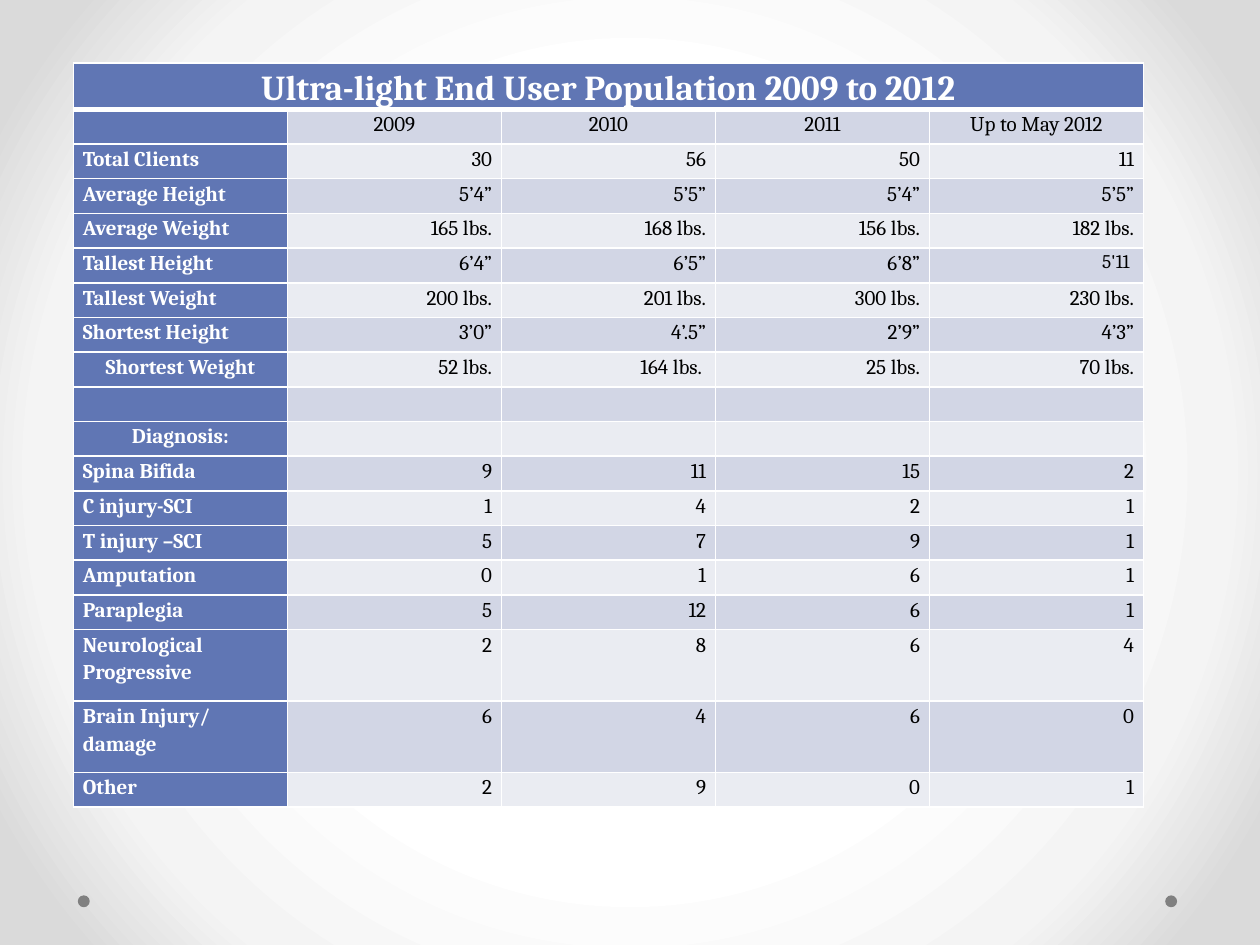
import dataclasses
import pptx
import pptx.dml.color
import pptx.enum.shapes
import pptx.enum.text
import pptx.oxml
import pptx.oxml.ns
import pptx.util

Cm, Pt = pptx.util.Cm, pptx.util.Pt
Rgb = pptx.dml.color.RGBColor.from_string
Align = pptx.enum.text.PP_ALIGN
qn = pptx.oxml.ns.qn


@dataclasses.dataclass(frozen=True)
class Theme:
    font: str = "Cambria"
    head: int = 20
    body: int = 12
    small: int = 11
    blue: str = "6076B4"
    bands: tuple = ("D2D6E5", "EAECF2")
    white: str = "FFFFFF"
    black: str = "000000"
    dot: str = "808080"
    glow: tuple = ((50, "FFFFFF"), (76, "F4F4F4"), (92, "DADADA"))


THEME = Theme()
TITLE = "Ultra-light End User Population 2009 to 2012"
ROWS = [
    ("", "2009", "2010", "2011", "Up to May 2012"),
    ("Total Clients", "30", "56", "50", "11"),
    ("Average Height", "5’4”", "5’5”", "5’4”", "5’5”"),
    ("Average Weight", "165 lbs.", "168 lbs.", "156 lbs.", "182 lbs."),
    ("Tallest Height", "6’4”", "6’5”", "6’8”", "5'11 "),
    ("Tallest Weight", "200 lbs.", "201 lbs.", "300 lbs.", "230 lbs."),
    ("Shortest Height", "3’0”", "4’.5”", "2’9”", "4’3”"),
    ("Shortest Weight", "52 lbs.", "164 lbs. ", "25 lbs.", "70 lbs."),
    ("", "", "", "", ""),
    ("Diagnosis:", "", "", "", ""),
    ("Spina Bifida", "9", "11", "15", "2"),
    ("C injury-SCI", "1", "4", "2", "1"),
    ("T injury –SCI", "5", "7", "9", "1"),
    ("Amputation", "0", "1", "6", "1"),
    ("Paraplegia", "5", "12", "6", "1"),
    ("Neurological Progressive", "2", "8", "6", "4"),
    ("Brain Injury/ damage", "6", "4", "6", "0"),
    ("Other", "2", "9", "0", "1"),
]
CENTRED = {"Shortest Weight", "Diagnosis:"}
TALL = {"Neurological Progressive", "Brain Injury/ damage"}


def apply(item, values):
    for name, value in values.items():
        setattr(item, name, value)


def paint(item, color):
    item.fill.solid()
    item.fill.fore_color.rgb = Rgb(color)


def backdrop(slide):
    """Radial glow, white in the middle and grey at the corners."""
    slide.background.fill.gradient()
    old = slide.element.find(".//" + qn("a:gradFill"))
    stops = "".join(
        f'<a:gs pos="{pos * 1000}"><a:srgbClr val="{color}"/></a:gs>'
        for pos, color in THEME.glow)
    new = pptx.oxml.parse_xml(
        f'<a:gradFill {pptx.oxml.ns.nsdecls("a")} rotWithShape="1">'
        f'<a:gsLst>{stops}</a:gsLst><a:path path="circle">'
        '<a:fillToRect l="50000" t="50000" r="50000" b="50000"/>'
        '</a:path></a:gradFill>')
    old.getparent().replace(old, new)


def dots(slide, left, top, width, size):
    """One dot at each end of the box."""
    for x in (left, left + width - size):
        dot = slide.shapes.add_shape(
            pptx.enum.shapes.MSO_SHAPE.OVAL, x, top, size, size)
        paint(dot, THEME.dot)
        dot.line.fill.background()
        dot.shadow.inherit = False


def edge(cell, row):
    """White cell borders, with a thick rule below the title."""
    props = cell._tc.get_or_add_tcPr()
    for side in "LRTB":
        thick = (row, side) in ((0, "B"), (1, "T"))
        props.append(pptx.oxml.parse_xml(
            f'<a:ln{side} {pptx.oxml.ns.nsdecls("a")} w="{Pt(3 if thick else 1)}">'
            f'<a:solidFill><a:srgbClr val="{THEME.white}"/></a:solidFill>'
            f'</a:ln{side}>'))


def write(cell, text, size, color, bold, align):
    apply(cell, {"margin_left": Cm(0.19), "margin_right": Cm(0.19),
                 "margin_top": 0, "margin_bottom": 0})
    para = cell.text_frame.paragraphs[0]
    apply(para, {"alignment": align, "line_spacing": 1.15})
    if text:
        run = para.add_run()
        run.text = text
        apply(run.font, {"name": THEME.font, "size": Pt(size), "bold": bold})
        run.font.color.rgb = Rgb(color)
    else:
        # Keeps an empty cell from stretching its row
        para._p.append(pptx.oxml.parse_xml(
            f'<a:endParaRPr {pptx.oxml.ns.nsdecls("a")} sz="{size * 100}"/>'))


def grid(slide, left, top, width):
    """Table with a merged title row, a label column and banded values."""
    count = len(ROWS[0])
    high = [Cm(0.93)] + [Cm(1.44 if row[0] in TALL else 0.7) for row in ROWS]
    table = slide.shapes.add_table(
        len(high), count, left, top, width, sum(high)).table
    apply(table, {"first_row": False, "horz_banding": False})
    for row, value in zip(table.rows, high):
        row.height = value

    # Title row
    for cell in table.rows[0].cells:
        edge(cell, 0)
        paint(cell, THEME.blue)
    table.cell(0, 0).merge(table.cell(0, count - 1))
    write(table.cell(0, 0), TITLE, THEME.head, THEME.white, True, Align.CENTER)

    # Labels and values
    for r, row in enumerate(ROWS, 1):
        for c, text in enumerate(row):
            cell = table.cell(r, c)
            label = c == 0
            size = THEME.small if text == "5'11 " else THEME.body
            if r == 1 or text in CENTRED:
                align = Align.CENTER
            else:
                align = Align.LEFT if label else Align.RIGHT
            edge(cell, r)
            paint(cell, THEME.blue if label else THEME.bands[(r - 1) % 2])
            write(cell, text, size, THEME.white if label else THEME.black,
                  label, align)


def main():
    deck = pptx.Presentation()
    apply(deck, {"slide_width": Cm(25.4), "slide_height": Cm(19.05)})
    slide = deck.slides.add_slide(deck.slide_layouts[6])
    backdrop(slide)
    dots(slide, Cm(1.57), Cm(18.05), Cm(22.16), Cm(0.24))
    grid(slide, Cm(1.48), Cm(1.27), Cm(21.57))
    deck.save("out.pptx")


if __name__ == "__main__":
    main()
